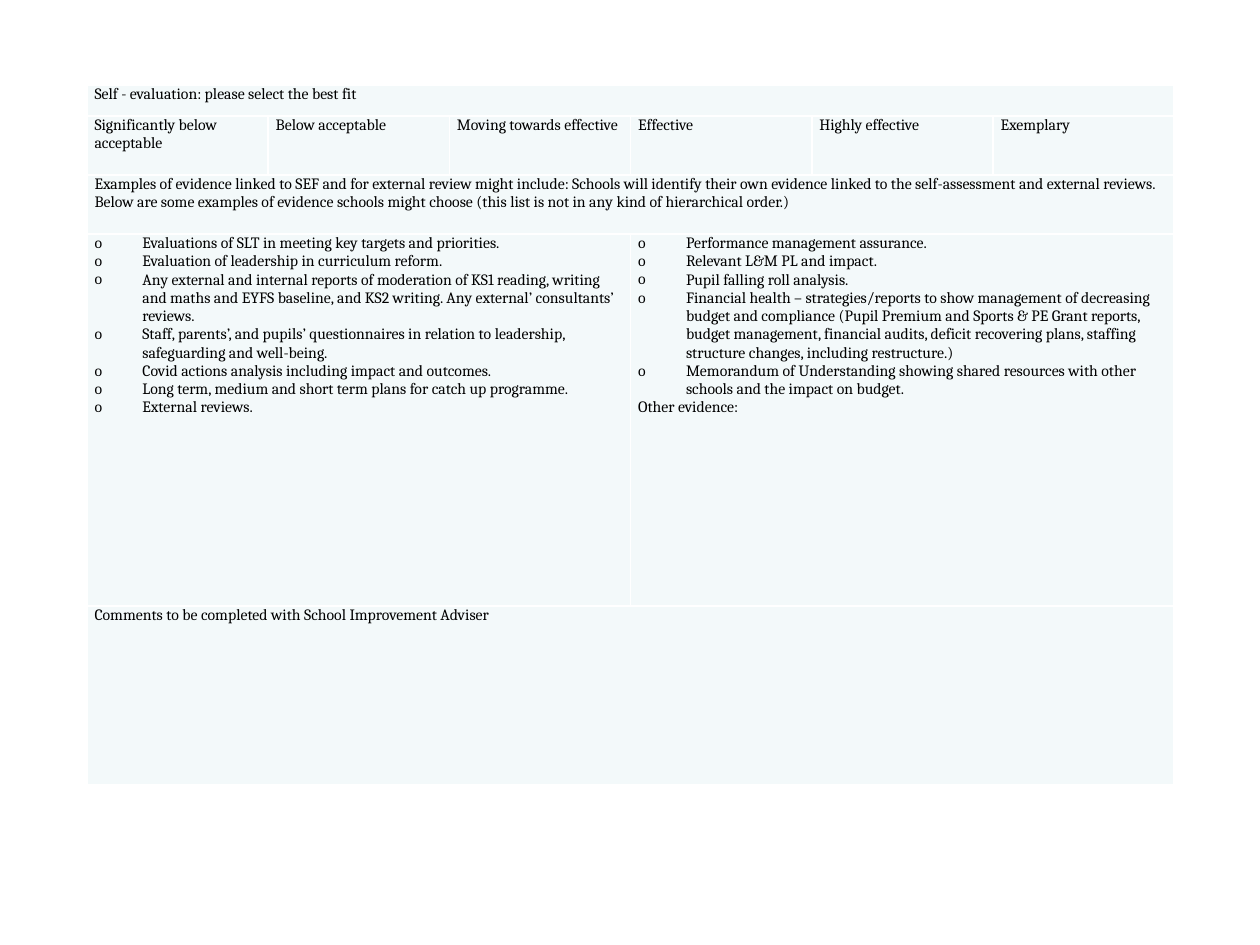
from dataclasses import dataclass

from lxml.etree import SubElement
from pptx import Presentation
from pptx.dml.color import RGBColor
from pptx.oxml.ns import qn
from pptx.util import Inches, Pt

COLUMNS = 6
LEFT, TOP, WIDTH = 0.69, 0.68, 8.63
ROW_HEIGHTS = [0.24, 0.47, 0.47, 2.95, 1.42]


@dataclass(frozen=True)
class Theme:
    font: str = "Cambria"
    size: float = 9
    ink: str = "000000"
    fill: str = "F3F9FA"
    border: str = "FFFFFF"
    border_width: float = 1
    inset: float = 0.06
    indent: float = 0.38


THEME = Theme()

RATINGS = [
    "Significantly below acceptable", "Below acceptable", "Moving towards effective",
    "Effective", "Highly effective", "Exemplary",
]
LEADERSHIP_EVIDENCE = [
    "Evaluations of SLT in meeting key targets and priorities.",
    "Evaluation of leadership in curriculum reform.",
    "Any external and internal reports of moderation of KS1 reading, writing and maths and "
    "EYFS baseline, and KS2 writing. Any external’ consultants’ reviews.",
    "Staff, parents’, and pupils’ questionnaires in relation to leadership, safeguarding "
    "and well-being.",
    "Covid actions analysis including impact and outcomes.",
    "Long term, medium and short term plans for catch up programme.",
    "External reviews.",
]
MANAGEMENT_EVIDENCE = [
    "Performance management assurance.",
    "Relevant L&M PL and impact.",
    "Pupil falling roll analysis.",
    "Financial health – strategies/reports to show management of decreasing budget and "
    "compliance (Pupil Premium and Sports & PE Grant reports, budget management, financial "
    "audits, deficit recovering plans, staffing structure changes, including restructure.)",
    "Memorandum of Understanding showing shared resources with other schools and the impact "
    "on budget.",
]

# Each row is a list of cells that share its width equally: (bulleted lines, plain lines)
ROWS = [
    [([], ["Self - evaluation: please select the best fit"])],
    [([], [rating]) for rating in RATINGS],
    [([], [
        "Examples of evidence linked to SEF and for external review might include: Schools "
        "will identify their own evidence linked to the self-assessment and external reviews. "
        "Below are some examples of evidence schools might choose (this list is not in any "
        "kind of hierarchical order.)",
    ])],
    [(LEADERSHIP_EVIDENCE, []), (MANAGEMENT_EVIDENCE, ["Other evidence:"])],
    [([], ["Comments to be completed with School Improvement Adviser"])],
]


def style_cell(cell):
    margins = {"margin_left": THEME.inset, "margin_right": THEME.inset,
               "margin_top": 0, "margin_bottom": 0}
    for name, value in margins.items():
        setattr(cell, name, Inches(value))
    properties = cell._tc.get_or_add_tcPr()
    for side in ("lnL", "lnR", "lnT", "lnB"):
        line = SubElement(properties, qn(f"a:{side}"), w=str(Pt(THEME.border_width)))
        SubElement(SubElement(line, qn("a:solidFill")), qn("a:srgbClr"), val=THEME.border)
    cell.fill.solid()
    cell.fill.fore_color.rgb = RGBColor.from_string(THEME.fill)


def add_bullet(para):
    properties = para._p.get_or_add_pPr()
    indent = Inches(THEME.indent)
    properties.set("marL", str(indent))
    properties.set("indent", str(-indent))
    SubElement(properties, qn("a:buFont"), typeface=THEME.font)
    SubElement(properties, qn("a:buChar"), char="o")


def write_cell(cell, bullets, plain):
    frame = cell.text_frame
    for number, text in enumerate(bullets + plain):
        para = frame.add_paragraph() if number else frame.paragraphs[0]
        if number < len(bullets):
            add_bullet(para)
        span = para.add_run()
        span.text = text
        font_format = {"name": THEME.font, "size": Pt(THEME.size), "bold": False}
        for name, value in font_format.items():
            setattr(span.font, name, value)
        span.font.color.rgb = RGBColor.from_string(THEME.ink)


def add_evaluation_table(page):
    frame = page.shapes.add_table(
        len(ROWS), COLUMNS, Inches(LEFT), Inches(TOP), Inches(WIDTH), Inches(sum(ROW_HEIGHTS)))
    table = frame.table
    table.first_row = table.horz_banding = False
    for column in table.columns:
        column.width = Inches(WIDTH / COLUMNS)
    for row, height in zip(table.rows, ROW_HEIGHTS):
        row.height = Inches(height)
    for cell in table.iter_cells():
        style_cell(cell)
    for row_number, contents in enumerate(ROWS):
        width = COLUMNS // len(contents)
        for position, (bullets, plain) in enumerate(contents):
            first = position * width
            cell = table.cell(row_number, first)
            if width > 1:
                cell.merge(table.cell(row_number, first + width - 1))
            write_cell(cell, bullets, plain)


def main():
    deck = Presentation()
    deck.slide_width, deck.slide_height = Inches(10), Inches(7.5)
    page = deck.slides.add_slide(deck.slide_layouts[6])
    add_evaluation_table(page)
    deck.save("out.pptx")


if __name__ == "__main__":
    main()
